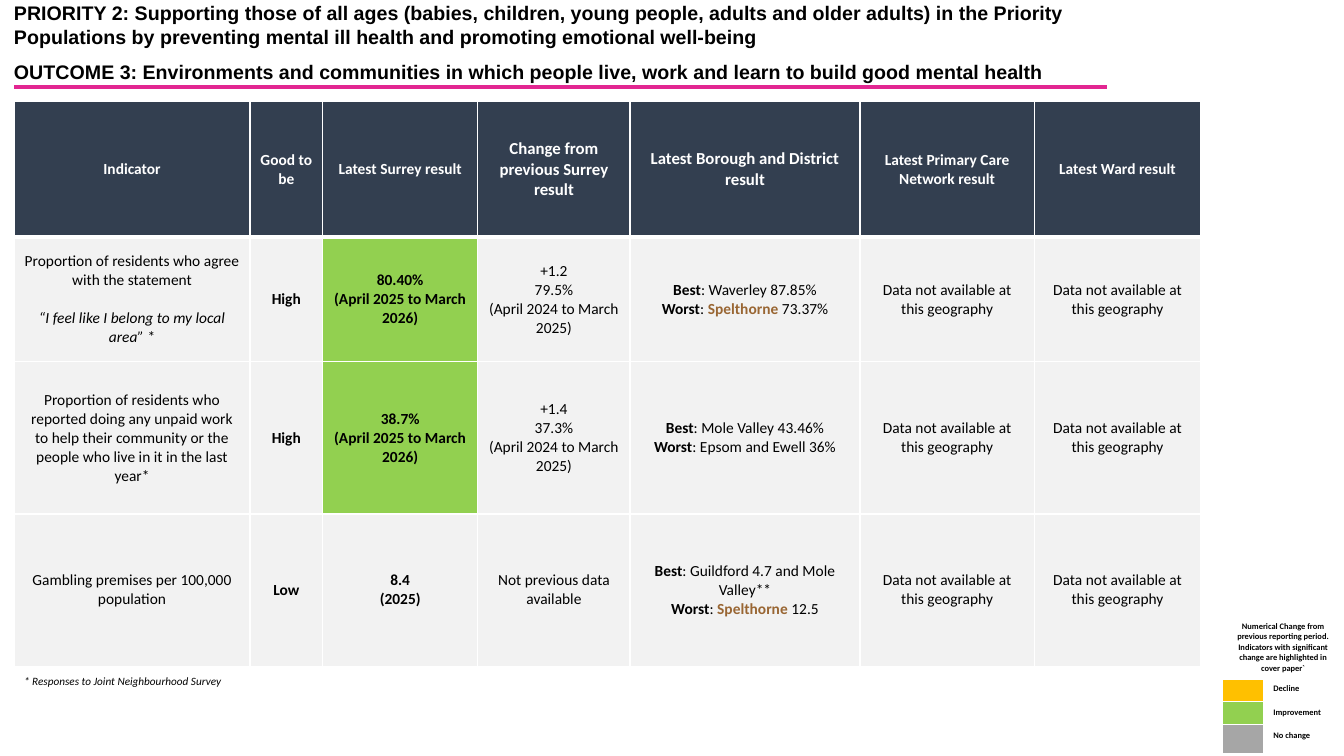
from dataclasses import dataclass
from typing import Optional

from lxml.etree import SubElement
from pptx import Presentation
from pptx.dml.color import RGBColor
from pptx.enum.shapes import MSO_CONNECTOR as Connector, MSO_SHAPE as Preset
from pptx.enum.text import MSO_ANCHOR as Anchor, PP_ALIGN as Align
from pptx.oxml.ns import qn
from pptx.util import Inches, Pt

BLACK = RGBColor(0, 0, 0)
WHITE = RGBColor(0xFF, 0xFF, 0xFF)
PINK = RGBColor(0xE2, 0x26, 0x91)
NAVY = RGBColor(0x33, 0x3F, 0x50)
PALE = RGBColor(0xF2, 0xF2, 0xF2)
GREEN = RGBColor(0x92, 0xD0, 0x50)
AMBER = RGBColor(0xFF, 0xC0, 0x00)
GREY = RGBColor(0xA6, 0xA6, 0xA6)
BROWN = RGBColor(0x99, 0x66, 0x33)


@dataclass(frozen=True)
class Span:
    text: str
    bold: bool = False
    italic: bool = False
    color: RGBColor = BLACK


@dataclass(frozen=True)
class Indicator:
    name: list
    good: str
    latest: list
    change: list
    best: str
    worst: list
    color: RGBColor


@dataclass(frozen=True)
class Key:
    label: str
    color: RGBColor
    height: float


HEADINGS = [
    ("Indicator", 11), ("Good to be", 11), ("Latest Surrey result", 11),
    ("Change from previous Surrey result", 12),
    ("Latest Borough and District result", 12),
    ("Latest Primary Care Network result", 11), ("Latest Ward result", 11),
]
COLUMNS = [2.34, 0.72, 1.54, 1.51, 2.28, 1.73, 1.65]
ROWS = [1.34, 1.24, 1.51, 1.51]
NOW = "(April 2025 to March 2026)"
BEFORE = "(April 2024 to March 2025)"
NO_DATA = "Data not available at this geography"
SPELTHORNE = Span("Spelthorne", bold=True, color=BROWN)

INDICATORS = [
    Indicator(
        ["Proportion of residents who agree with the statement",
         [Span("“I feel like I belong to my local area” ", italic=True), Span("*")]],
        "High", ["80.40%", NOW], ["+1.2", "79.5%", BEFORE],
        "Waverley 87.85%", [SPELTHORNE, Span(" 73.37%")], GREEN),
    Indicator(
        ["Proportion of residents who reported doing any unpaid work to help "
         "their community or the people who live in it in the last year*"],
        "High", ["38.7%", NOW], ["+1.4", "37.3%", BEFORE],
        "Mole Valley 43.46%", [Span("Epsom and Ewell 36%")], GREEN),
    Indicator(
        ["Gambling premises per 100,000 population"],
        "Low", ["8.4", "(2025)"], ["Not previous data available"],
        "Guildford 4.7 and Mole Valley**", [SPELTHORNE, Span(" 12.5")], PALE),
]

KEYS = [Key("Decline", AMBER, 0.23), Key("Improvement", GREEN, 0.23),
        Key("No change", GREY, 0.28)]
KEY_TITLE = ("Numerical Change from previous reporting period. Indicators with "
             "significant change are highlighted in cover paper`")


def write(frame, paras: list, *, size: float, font: str = "Calibri",
          align: Align = Align.LEFT, bold: bool = False, italic: bool = False,
          color: RGBColor = BLACK, gap: float = 0, spacing=None) -> None:
    frame.word_wrap = True
    for index, content in enumerate(paras):
        para = frame.add_paragraph() if index else frame.paragraphs[0]
        para.alignment = align
        if index and gap:
            para.space_before = Pt(gap)
        if spacing:
            para.line_spacing = spacing
        spans = [Span(content, bold, italic, color)] if isinstance(content, str) else content
        for span in spans:
            run = para.add_run()
            run.text = span.text
            run.font.name = font
            run.font.size = Pt(size)
            run.font.bold = span.bold
            run.font.italic = span.italic
            run.font.color.rgb = span.color


def style_cell(cell, color: Optional[RGBColor], *, line: float,
               top: Optional[float] = None, bottom: Optional[float] = None) -> None:
    if color is None:
        cell.fill.background()
    else:
        cell.fill.solid()
        cell.fill.fore_color.rgb = color
    properties = cell._tc.get_or_add_tcPr()
    widths = {"lnL": line, "lnR": line, "lnT": top or line, "lnB": bottom or line}
    for place, (tag, width) in enumerate(widths.items()):
        border = SubElement(properties, qn(f"a:{tag}"), w=str(Pt(width)))
        fill = SubElement(border, qn("a:solidFill"))
        SubElement(fill, qn("a:srgbClr"), val=str(WHITE))
        properties.insert(place, border)


def add_grid(page, left: float, top: float, columns: list, rows: list):
    table = page.shapes.add_table(
        len(rows), len(columns), Inches(left), Inches(top),
        Inches(sum(columns)), Inches(sum(rows))).table
    table.first_row = table.horz_banding = False
    for column, width in zip(table.columns, columns):
        column.width = Inches(width)
    for row, height in zip(table.rows, rows):
        row.height = Inches(height)
    return table


def add_rule(page) -> None:
    rule = page.shapes.add_connector(
        Connector.STRAIGHT, Inches(0.14), Inches(0.86), Inches(10.98), Inches(0.86))
    rule.line.color.rgb = PINK
    rule.line.width = Pt(3)
    SubElement(rule._element.spPr, qn("a:effectLst"))


def add_results(page) -> None:
    table = add_grid(page, 0.14, 1.01, COLUMNS, ROWS)
    for column, (heading, size) in enumerate(HEADINGS):
        cell = table.cell(0, column)
        cell.vertical_anchor = Anchor.MIDDLE
        style_cell(cell, NAVY, line=1, bottom=3)
        write(cell.text_frame, [heading], size=size, align=Align.CENTER,
              bold=True, color=WHITE)
    for row, item in enumerate(INDICATORS, 1):
        places = [[Span("Best", bold=True), Span(f": {item.best}")],
                  [Span("Worst", bold=True), Span(": "), *item.worst]]
        contents = [item.name, [item.good], item.latest, item.change, places,
                    [NO_DATA], [NO_DATA]]
        for column, content in enumerate(contents):
            cell = table.cell(row, column)
            cell.vertical_anchor = Anchor.MIDDLE
            style_cell(cell, item.color if column == 2 else PALE, line=1,
                       top=3 if row == 1 else None)
            write(cell.text_frame, content, size=11, align=Align.CENTER,
                  bold=column in (1, 2), gap=0 if column else 13.4)


def add_note(page) -> None:
    box = page.shapes.add_textbox(Inches(0.14), Inches(6.64), Inches(12.54), Inches(0.24))
    write(box.text_frame, ["* Responses to Joint Neighbourhood Survey"], size=8, italic=True)


def add_title(page) -> None:
    box = page.shapes.add_shape(Preset.RECTANGLE, Inches(0.04), 0, Inches(11.61), Inches(0.84))
    box.shadow.inherit = False
    box.fill.solid()
    box.fill.fore_color.rgb = WHITE
    box.line.color.rgb = WHITE
    box.line.width = Pt(0.75)
    box.text_frame.vertical_anchor = Anchor.MIDDLE
    write(box.text_frame, [
        "PRIORITY 2: Supporting those of all ages (babies, children, young people, "
        "adults and older adults) in the Priority Populations by preventing mental "
        "ill health and promoting emotional well-being",
        "OUTCOME 3: Environments and communities in which people live, work and "
        "learn to build good mental health"], size=14, font="Arial", bold=True)
    box.text_frame.paragraphs[1].line_spacing = 1.5


def add_legend(page) -> None:
    table = add_grid(page, 12.12, 6.11, [0.41, 0.8], [0.55] + [key.height for key in KEYS])
    title = table.cell(0, 0)
    title.merge(table.cell(0, 1))
    for column in range(2):
        style_cell(table.cell(0, column), None, line=0.92, bottom=2.78)
    write(title.text_frame, [KEY_TITLE], size=6, align=Align.CENTER, bold=True, spacing=Pt(7.5))
    for row, key in enumerate(KEYS, 1):
        swatch, label = table.cell(row, 0), table.cell(row, 1)
        top = 2.78 if row == 1 else None
        style_cell(swatch, key.color, line=0.92, top=top)
        style_cell(label, None, line=0.92, top=top)
        SubElement(swatch.text_frame.paragraphs[0]._p, qn("a:endParaRPr"), sz="600")
        write(label.text_frame, [key.label], size=6, bold=True, spacing=Pt(7.5))


def main() -> None:
    deck = Presentation()
    deck.slide_width = Inches(13.33)
    deck.slide_height = Inches(7.5)
    page = deck.slides.add_slide(deck.slide_layouts[6])
    for draw in (add_rule, add_results, add_note, add_title, add_legend):
        draw(page)
    deck.save("out.pptx")


if __name__ == "__main__":
    main()
